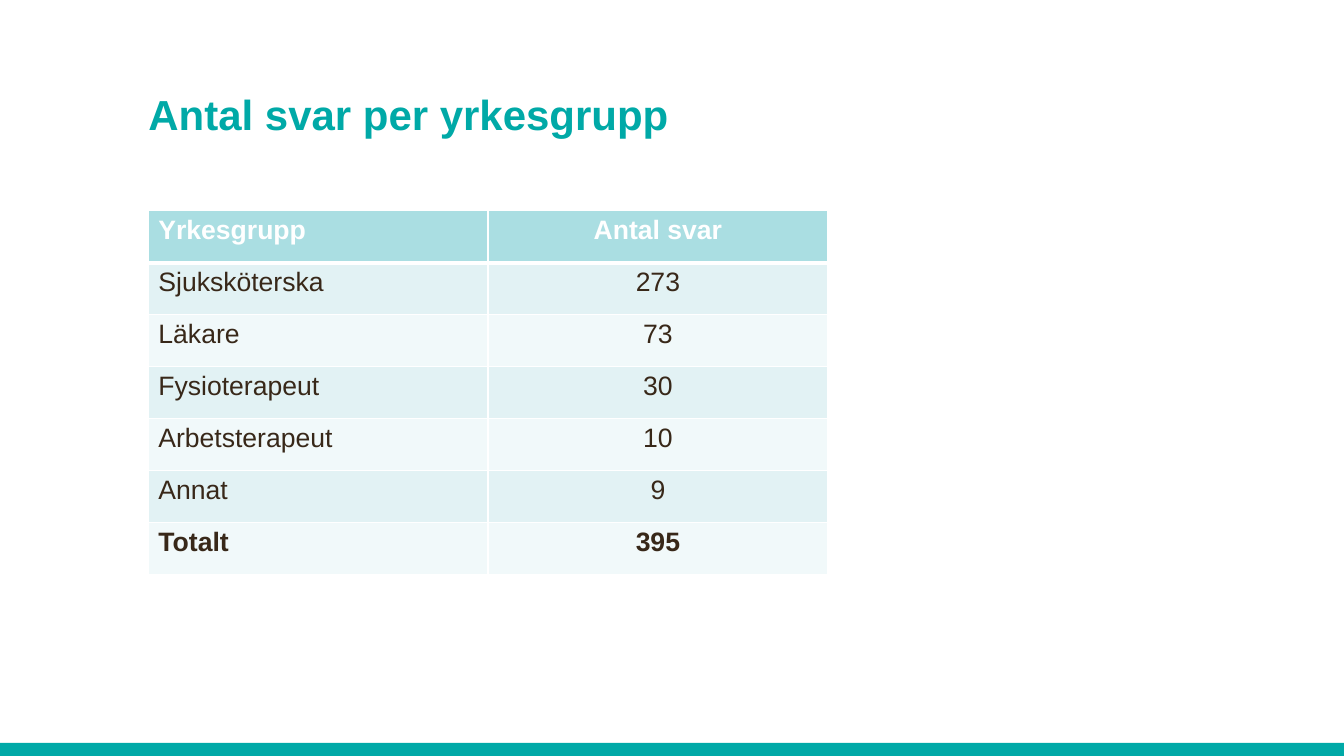
import dataclasses

import lxml.etree
import pptx
import pptx.dml.color
import pptx.enum.shapes
import pptx.enum.text
import pptx.oxml.ns
import pptx.slide
import pptx.table
import pptx.util

Cm = pptx.util.Cm
Pt = pptx.util.Pt
RGB = pptx.dml.color.RGBColor.from_string
Align = pptx.enum.text.PP_ALIGN
qn = pptx.oxml.ns.qn


@dataclasses.dataclass(frozen=True)
class Theme:
    font: str = "Arial"
    teal: str = "00A9A7"
    white: str = "FFFFFF"
    ink: str = "382819"
    head: str = "AADEE2"
    bands: tuple[str, str] = ("E2F2F4", "F1F9FA")
    title: float = 30
    body: float = 19
    thin: float = 1
    thick: float = 3


@dataclasses.dataclass(frozen=True)
class Row:
    group: str
    count: str
    bold: bool = False


THEME = Theme()
WIDTH, HEIGHT = Cm(33.87), Cm(19.05)
LEFT = Cm(3.74)
ROWS = [
    Row("Yrkesgrupp", "Antal svar", True),
    Row("Sjuksköterska", "273"),
    Row("Läkare", "73"),
    Row("Fysioterapeut", "30"),
    Row("Arbetsterapeut", "10"),
    Row("Annat", "9"),
    Row("Totalt", "395", True),
]


def style(par, size: float, color: str, bold: bool, align: Align) -> None:
    par.alignment = align
    par.font.name = THEME.font
    par.font.size = Pt(size)
    par.font.bold = bold
    par.font.color.rgb = RGB(color)


def edge(cell: pptx.table._Cell, side: str, width: float) -> None:
    props = cell._tc.get_or_add_tcPr()
    line = lxml.etree.SubElement(props, qn(f"a:ln{side}"), w=str(Pt(width)))
    fill = lxml.etree.SubElement(line, qn("a:solidFill"))
    lxml.etree.SubElement(fill, qn("a:srgbClr"), val=THEME.white)


def add_bar(slide: pptx.slide.Slide) -> None:
    high = Cm(0.33)
    kind = pptx.enum.shapes.MSO_SHAPE.RECTANGLE
    bar = slide.shapes.add_shape(kind, 0, HEIGHT - high, WIDTH, high)
    bar.shadow.inherit = False
    bar.fill.solid()
    bar.fill.fore_color.rgb = RGB(THEME.teal)
    bar.line.fill.background()


def set_title(slide: pptx.slide.Slide, text: str) -> None:
    title = slide.shapes.title
    title.left, title.top = LEFT, Cm(0.91)
    title.width, title.height = Cm(26.39), Cm(2.59)
    frame = title.text_frame
    frame.text = text
    frame.auto_size = pptx.enum.text.MSO_AUTO_SIZE.NONE
    frame.vertical_anchor = pptx.enum.text.MSO_ANCHOR.BOTTOM
    frame.margin_left = frame.margin_right = 0
    frame.margin_top = frame.margin_bottom = 0
    style(frame.paragraphs[0], THEME.title, THEME.teal, True, Align.LEFT)


def add_grid(slide: pptx.slide.Slide, rows: list[Row]) -> None:
    wide, high = Cm(8.56), Cm(1.31)
    grid = slide.shapes.add_table(
        len(rows), 2, LEFT, Cm(5.31), 2 * wide, len(rows) * high
    ).table
    for i, row in enumerate(rows):
        head = i == 0
        back = THEME.head if head else THEME.bands[(i - 1) % 2]
        color = THEME.white if head else THEME.ink
        # The rule under the header is heavier than the others
        above = THEME.thick if i == 1 else THEME.thin
        below = THEME.thick if head else THEME.thin
        sides = {"L": THEME.thin, "R": THEME.thin, "T": above, "B": below}
        pairs = ((row.group, Align.LEFT), (row.count, Align.CENTER))
        for j, (text, align) in enumerate(pairs):
            cell = grid.cell(i, j)
            cell.text = text
            style(cell.text_frame.paragraphs[0], THEME.body, color, row.bold, align)
            for side, width in sides.items():
                edge(cell, side, width)
            cell.fill.solid()
            cell.fill.fore_color.rgb = RGB(back)


def main() -> None:
    deck = pptx.Presentation()
    deck.slide_width, deck.slide_height = WIDTH, HEIGHT
    slide = deck.slides.add_slide(deck.slide_layouts.get_by_name("Title Only"))

    # Footer bar, heading and table
    add_bar(slide)
    set_title(slide, "Antal svar per yrkesgrupp")
    add_grid(slide, ROWS)
    deck.save("out.pptx")


if __name__ == "__main__":
    main()
